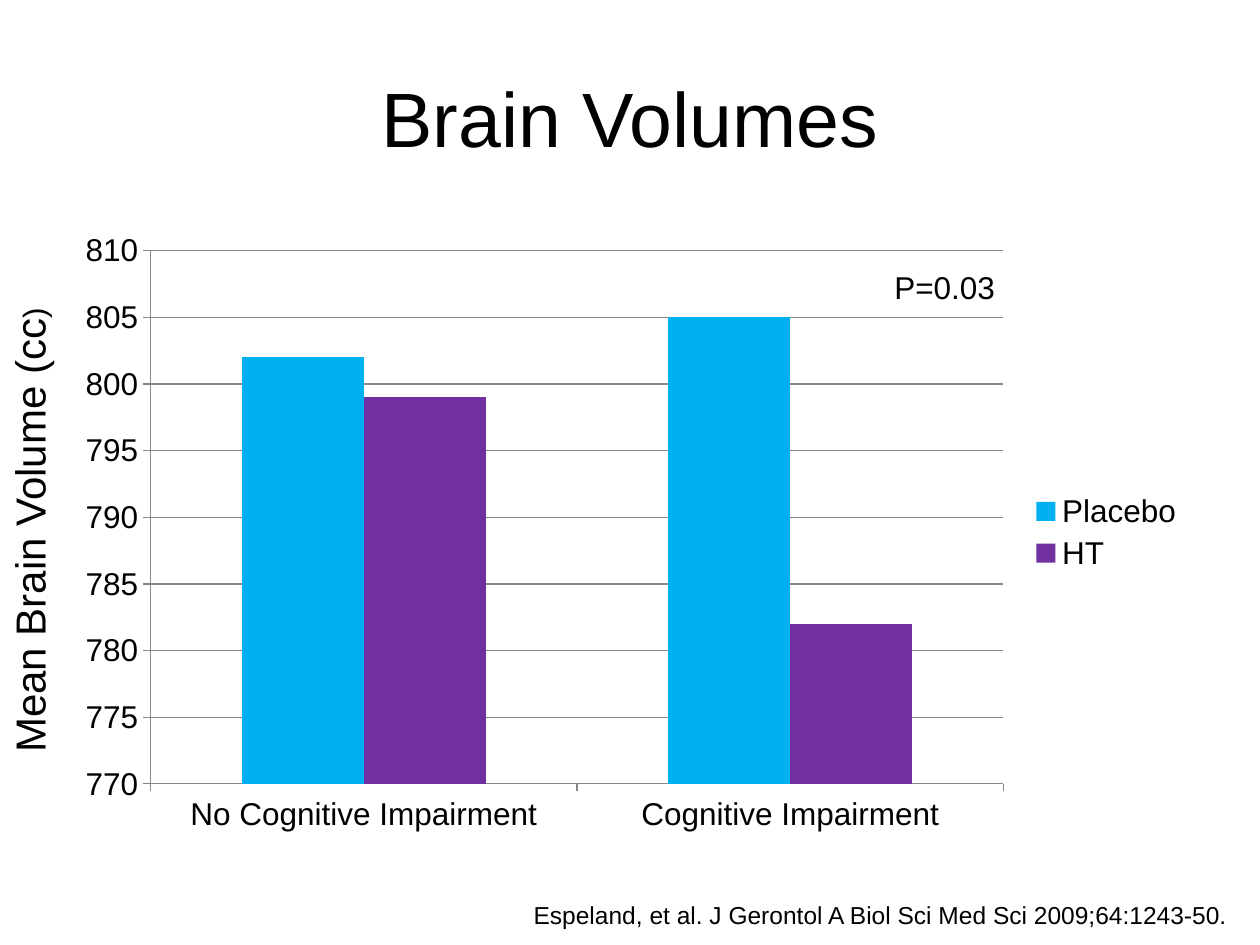
from pptx import Presentation
from pptx.chart.data import CategoryChartData
from pptx.dml.color import RGBColor
from pptx.enum import chart as ch, text
from pptx.util import Inches, Pt

FONT = "Arial"
BLACK = "000000"
GRID = "868686"
SERIES = [("Placebo", (802, 799 + 6), "00B0F0"), ("HT", (799, 782), "7030A0")]


def color(value):
    return RGBColor.from_string(value)


def style(font, size):
    font.name = FONT
    font.size = Pt(size)
    font.color.rgb = color(BLACK)


def add_text(s, box, content, size, align, anchor=text.MSO_ANCHOR.TOP):
    tf = s.shapes.add_textbox(*map(Inches, box)).text_frame
    tf.word_wrap = True
    tf.vertical_anchor = anchor
    p = tf.paragraphs[0]
    p.text = content
    p.alignment = align
    style(p.runs[0].font, size)
    return tf


def add_axis_label(s, box):
    tf = add_text(s, box, "Mean Brain Volume (cc", 24, text.PP_ALIGN.CENTER)
    tf._txBody.bodyPr.set("vert", "vert270")
    # The closing bracket is smaller than the rest
    r = tf.paragraphs[0].add_run()
    r.text = ")"
    style(r.font, 18)


def add_volume_chart(s, box):
    data = CategoryChartData()
    data.categories = ["No Cognitive Impairment", "Cognitive Impairment"]
    for name, values, _ in SERIES:
        data.add_series(name, values)
    chart = s.shapes.add_chart(
        ch.XL_CHART_TYPE.COLUMN_CLUSTERED, *map(Inches, box), data).chart
    style(chart.font, 18)
    chart.has_title = False

    # Legend
    chart.has_legend = True
    chart.legend.position = ch.XL_LEGEND_POSITION.RIGHT
    chart.legend.include_in_layout = False

    # Axes and gridlines
    values = chart.value_axis
    values.minimum_scale, values.maximum_scale, values.major_unit = 770, 810, 5
    values.has_major_gridlines = True
    for axis in (chart.category_axis, values):
        axis.major_tick_mark = ch.XL_TICK_MARK.OUTSIDE
    for part in (chart.category_axis, values, values.major_gridlines):
        part.format.line.color.rgb = color(GRID)
        part.format.line.width = Pt(0.75)

    # Columns
    plot = chart.plots[0]
    plot.gap_width = 150
    plot.vary_by_categories = False
    for series, (_, _, fill) in zip(plot.series, SERIES):
        series.format.fill.solid()
        series.format.fill.fore_color.rgb = color(fill)


def main():
    prs = Presentation()
    prs.slide_width, prs.slide_height = Inches(10), Inches(7.5)
    s = prs.slides.add_slide(prs.slide_layouts[6])
    align = text.PP_ALIGN

    # Title
    add_text(s, (0.5, 0.3, 9, 1.25), "Brain Volumes", 44, align.CENTER,
             text.MSO_ANCHOR.MIDDLE)
    # Chart with its axis label and p-value
    add_volume_chart(s, (0.5, 1.75, 9, 4.95))
    add_axis_label(s, (-0.02, 1.75, 0.61, 4.92))
    add_text(s, (7, 2.08, 1.17, 0.4), "P=0.03", 18, align.LEFT)
    # Citation
    add_text(s, (3.67, 7.09, 6.17, 0.34),
             "Espeland, et al. J Gerontol A Biol Sci Med Sci 2009;64:1243-50.",
             14, align.RIGHT)
    prs.save("out.pptx")


if __name__ == "__main__":
    main()
